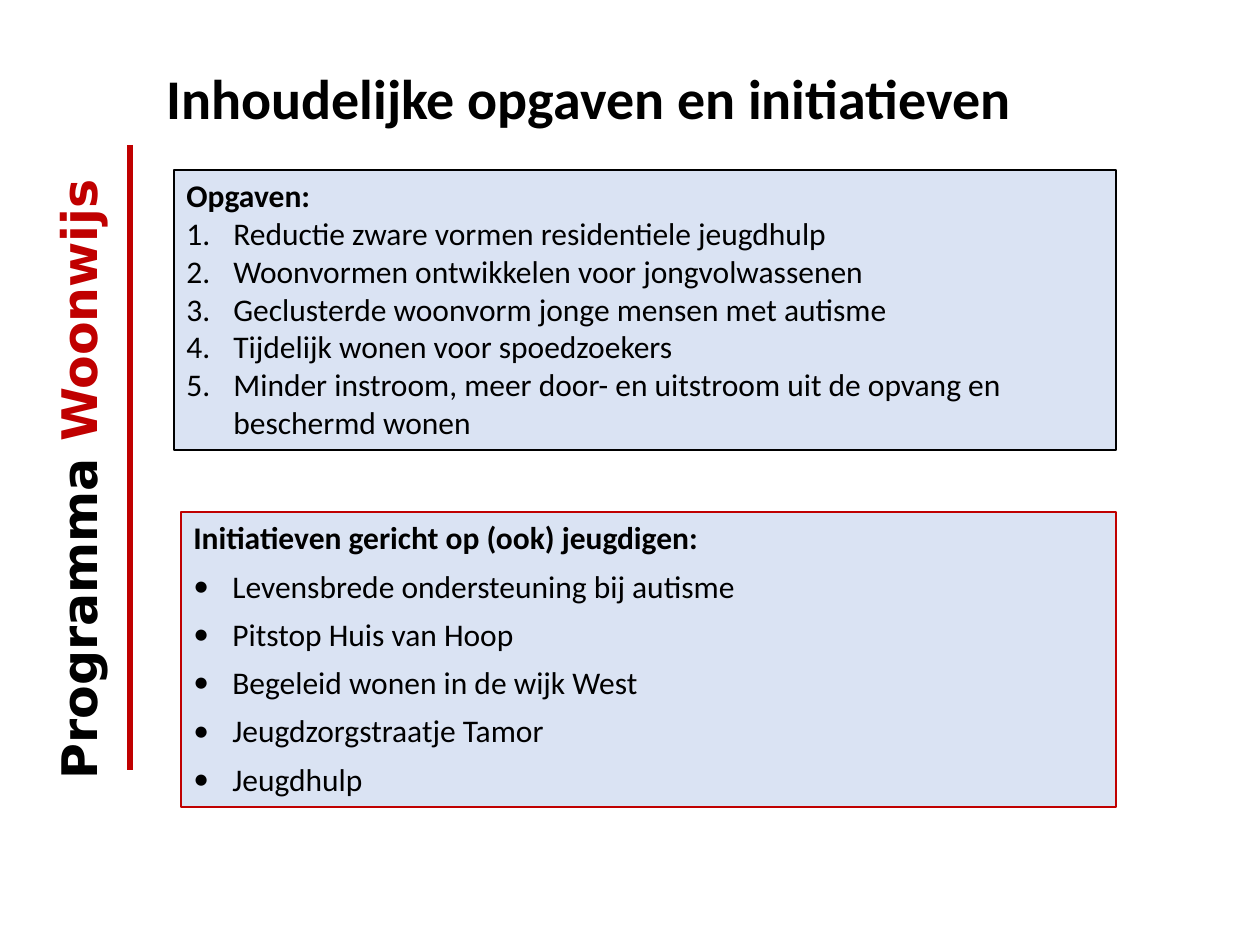
"""Build the slide with the tasks and initiatives of the housing programme."""
from lxml import etree
from pptx import Presentation
from pptx.dml.color import RGBColor
from pptx.enum.shapes import MSO_CONNECTOR, MSO_SHAPE
from pptx.enum.text import MSO_ANCHOR, MSO_AUTO_SIZE, PP_ALIGN
from pptx.oxml.ns import qn
from pptx.util import Pt

PX = 914400 // 126
RECTANGLE = MSO_SHAPE.RECTANGLE
STRAIGHT = MSO_CONNECTOR.STRAIGHT
MIDDLE, TOP = MSO_ANCHOR.MIDDLE, MSO_ANCHOR.TOP
CENTER, LEFT = PP_ALIGN.CENTER, PP_ALIGN.LEFT
GROW = MSO_AUTO_SIZE.SHAPE_TO_FIT_TEXT
COLORS = {
    "black": RGBColor.from_string("000000"),
    "white": RGBColor.from_string("FFFFFF"),
    "red": RGBColor.from_string("C00000"),
    "panel": RGBColor.from_string("DAE3F3"),
}


def format_font(font, name, size, color, bold):
    font.name = name
    font.size = Pt(size)
    font.bold = bold
    font.color.rgb = COLORS[color]


def add_box(left, top, width, height, fill):
    box = page.shapes.add_shape(RECTANGLE, left * PX, top * PX, width * PX, height * PX)
    box.shadow.inherit = False
    box.fill.solid()
    box.fill.fore_color.rgb = COLORS[fill]
    box.text_frame.word_wrap = True
    return box


deck = Presentation()
deck.slide_width = 1260 * PX
deck.slide_height = 945 * PX
page = deck.slides.add_slide(deck.slide_layouts[6])

banner = add_box(-290, 435, 735, 89, "white")
banner.line.fill.background()
banner.rotation = 270
banner.text_frame.vertical_anchor = MIDDLE
para = banner.text_frame.paragraphs[0]
para.alignment = CENTER
for text, color in [("Programma ", "black"), ("Woonwijs", "red")]:
    span = para.add_run()
    span.text = text
    format_font(span.font, "DejaVu Sans", 28, color, True)

title = page.shapes.add_textbox(154 * PX, 57 * PX, 912 * PX, 81 * PX)
title.text_frame.word_wrap = True
title.text_frame.auto_size = GROW
title.text_frame.text = "Inhoudelijke opgaven en initiatieven"
format_font(title.text_frame.paragraphs[0].runs[0].font, "Calibri", 32, "black", True)

rule = page.shapes.add_connector(STRAIGHT, 130 * PX, 145 * PX, 130 * PX, 770 * PX)
rule.line.color.rgb = COLORS["red"]
rule.line.width = Pt(3)
etree.SubElement(rule._element.spPr, qn("a:effectLst"))

panels = [
    {
        "place": (174, 170, 942, 280), "line": "black", "indent": 47, "after": 0,
        "bullet": ("a:buAutoNum", "type", "arabicPeriod"),
        "heading": "Opgaven:",
        "items": [
            "Reductie zware vormen residentiele jeugdhulp",
            "Woonvormen ontwikkelen voor jongvolwassenen",
            "Geclusterde woonvorm jonge mensen met autisme",
            "Tijdelijk wonen voor spoedzoekers",
            "Minder instroom, meer door- en uitstroom uit de opvang en beschermd wonen",
        ],
    },
    {
        "place": (181, 512, 935, 295), "line": "red", "indent": 39, "after": 6,
        "bullet": ("a:buChar", "char", "•"),
        "heading": "Initiatieven gericht op (ook) jeugdigen:",
        "items": [
            "Levensbrede ondersteuning bij autisme",
            "Pitstop Huis van Hoop",
            "Begeleid wonen in de wijk West",
            "Jeugdzorgstraatje Tamor",
            "Jeugdhulp",
        ],
    },
]
for panel in panels:
    box = add_box(*panel["place"], "panel")
    box.line.color.rgb = COLORS[panel["line"]]
    box.line.width = Pt(0.75)
    frame = box.text_frame
    frame.vertical_anchor = TOP
    frame.auto_size = GROW
    frame.text = "\n".join([panel["heading"], *panel["items"]])
    for index, para in enumerate(frame.paragraphs):
        para.alignment = LEFT
        para.space_after = Pt(panel["after"])
        if index:
            properties = para._p.get_or_add_pPr()
            properties.set("marL", str(panel["indent"] * PX))
            properties.set("indent", str(-panel["indent"] * PX))
            tag, attribute, value = panel["bullet"]
            font_tag = etree.SubElement(properties, qn("a:buFont"))
            font_tag.set("typeface", "Calibri")
            etree.SubElement(properties, qn(tag)).set(attribute, value)
        format_font(para.runs[0].font, "Calibri", 18, "black", index == 0)

deck.save("out.pptx")
